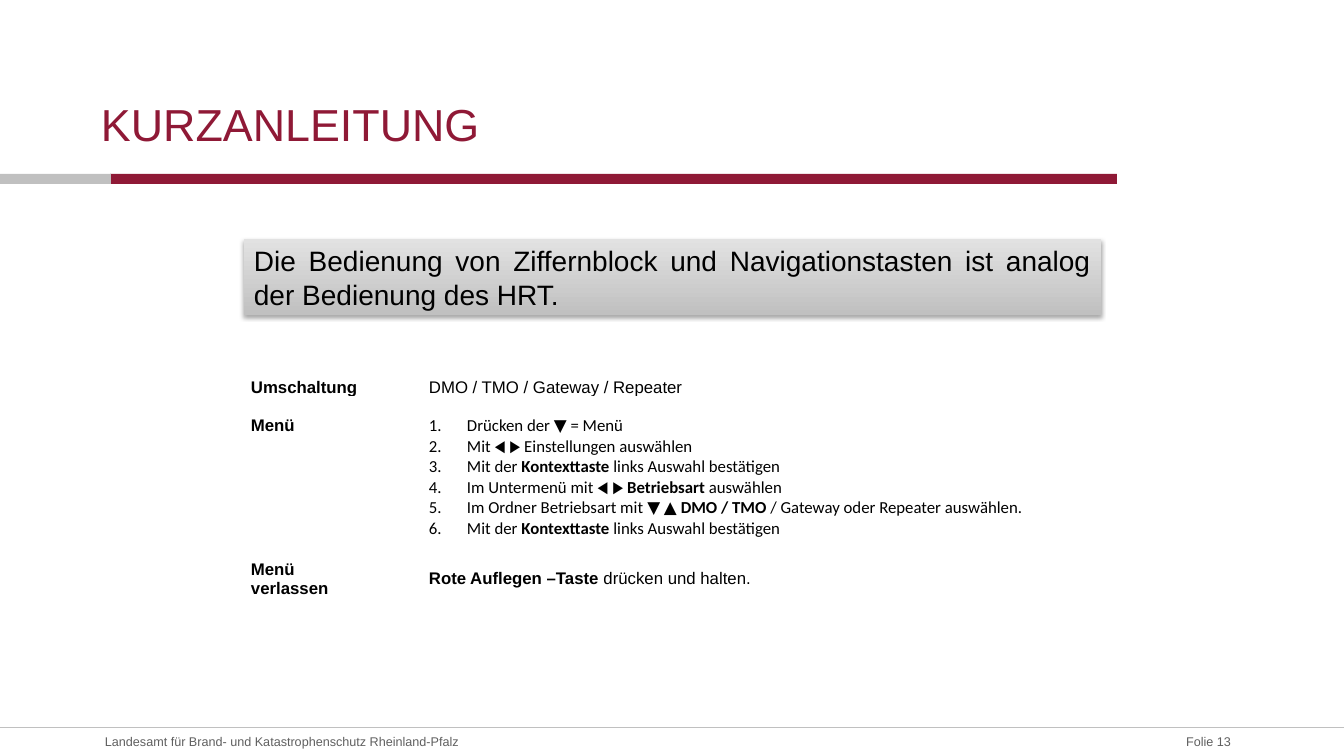
from lxml import etree
from pptx import Presentation, util as u
from pptx.dml.color import RGBColor
from pptx.enum import shapes, text
from pptx.oxml import parse_xml
from pptx.oxml.ns import nsdecls, qn

# Content: *...* marks bold
TITLE = "KURZANLEITUNG"
NOTE = ("Die Bedienung von Ziffernblock und Navigationstasten ist analog "
        "der Bedienung des HRT.")
STEPS = ["Drücken der ▼ = Menü",
         "Mit ◀ ▶ Einstellungen auswählen",
         "Mit der *Kontexttaste* links Auswahl bestätigen",
         "Im Untermenü mit ◀ ▶ *Betriebsart* auswählen",
         "Im Ordner Betriebsart mit ▼ ▲ *DMO / TMO* / Gateway oder Repeater auswählen.",
         "Mit der *Kontexttaste* links Auswahl bestätigen"]
ROWS = [(19, "*Umschaltung*", ["DMO / TMO / Gateway / Repeater"]),
        (18, "", [""]),
        (124, "*Menü*", STEPS),
        (20, "", [""]),
        (38, "*Menü\nverlassen*", ["*Rote Auflegen –Taste* drücken und halten."])]
COLS = [178, 610]
FOOT = [("Landesamt für Brand- und Katastrophenschutz Rheinland-Pfalz",
         (105, 728, 741, 28), "LEFT", 0),
        ("Folie 13", (1067, 728, 171, 28), "RIGHT", 7)]
RED, GREY, DARK, BLACK = "8F1936", "C0C0C0", "606060", "000000"
BARS = [((110, 174, 1007, 10), RED), ((0, 174, 111, 10), GREY)]


def px(n):
    return u.Emu(round(n * 914400 / 100.8))


def rgb(code):
    return RGBColor.from_string(code)


def box(at):
    return [px(n) for n in at]


def write(par, line, size, color=BLACK, face="Arial", side="LEFT"):
    par.alignment = getattr(text.PP_ALIGN, side)
    for i, part in enumerate(line.split("*")):
        for j, bit in enumerate(part.split("\n")):
            if j:
                par.add_line_break()
            if not bit:
                continue
            run = par.add_run()
            run.text = bit
            form = {"size": u.Pt(size), "name": face, "bold": i % 2 == 1}
            for key, val in form.items():
                setattr(run.font, key, val)
            run.font.color.rgb = rgb(color)


def frame(tf, anchor, right=0):
    form = {"margin_left": 0, "margin_top": 0, "margin_right": px(right),
            "margin_bottom": 0, "word_wrap": True,
            "auto_size": text.MSO_AUTO_SIZE.NONE,
            "vertical_anchor": getattr(text.MSO_ANCHOR, anchor)}
    for key, val in form.items():
        setattr(tf, key, val)


def rect(at):
    shape = slide.shapes.add_shape(shapes.MSO_SHAPE.RECTANGLE, *box(at))
    shape.shadow.inherit = False
    shape.line.fill.background()
    return shape


def number(par):
    props = par._p.get_or_add_pPr()
    props.set("marL", str(px(38)))
    props.set("indent", str(px(-38)))
    etree.SubElement(props, qn("a:buFont"), typeface="+mj-lt")
    etree.SubElement(props, qn("a:buAutoNum"), type="arabicPeriod")


prs = Presentation()
prs.slide_width, prs.slide_height = px(1344), px(756)
slide = prs.slides.add_slide(prs.slide_layouts[5])

# Title and bars
title = slide.shapes.title
title.left, title.top, title.width, title.height = box((101, 48, 858, 102))
frame(title.text_frame, "BOTTOM")
write(title.text_frame.paragraphs[0], TITLE, 32, RED)
for at, color in BARS:
    bar = rect(at)
    bar.fill.solid()
    bar.fill.fore_color.rgb = rgb(color)

# Footer
rule = slide.shapes.add_connector(shapes.MSO_CONNECTOR.STRAIGHT,
                                  *box((0, 728, 1344, 728)))
rule.line.color.rgb = rgb(GREY)
rule.line.width = u.Pt(0.75)
etree.SubElement(rule._element.spPr, qn("a:effectLst"))
for line, at, side, right in FOOT:
    tf = slide.shapes.add_textbox(*box(at)).text_frame
    frame(tf, "MIDDLE", right)
    write(tf.paragraphs[0], line, 9, DARK, side=side)

# Table
grid = slide.shapes.add_table(len(ROWS), len(COLS), *box(
    (244, 378, sum(COLS), sum(row[0] for row in ROWS)))).table
grid.first_row = grid.horz_banding = False
for col, wide in zip(grid.columns, COLS):
    col.width = px(wide)
for r, (high, label, lines) in enumerate(ROWS):
    grid.rows[r].height = px(high)
    for c, part in enumerate(([label], lines)):
        cell = grid.cell(r, c)
        cell.fill.background()
        cell.margin_left = cell.margin_right = px(7)
        cell.margin_top = cell.margin_bottom = 0
        if r == len(ROWS) - 1 and c == 1:
            cell.vertical_anchor = text.MSO_ANCHOR.MIDDLE
        steps = len(part) > 1
        for i, line in enumerate(part):
            tf = cell.text_frame
            par = tf.add_paragraph() if i else tf.paragraphs[0]
            if steps:
                number(par)
            write(par, line, 12, face="Calibri" if steps else "Arial",
                  side="LEFT" if r == len(ROWS) - 1 else "JUSTIFY")
            if not line:
                etree.SubElement(par._p, qn("a:endParaRPr"), sz="1100")

# Note with gradient and soft shadow
note = rect((244, 239, 857, 76))
note.fill.gradient()
note.fill.gradient_angle = 90
for stop, place, color in zip(note.fill.gradient_stops, (0, 1), (GREY, "E2E2E2")):
    stop.position = place
    stop.color.rgb = rgb(color)
note._element.spPr.find(qn("a:effectLst")).append(parse_xml(
    f'<a:outerShdw {nsdecls("a")} blurRad="{u.Pt(3.1)}" dist="{u.Pt(1.8)}" '
    f'dir="5400000" rotWithShape="0"><a:srgbClr val="{BLACK}">'
    '<a:alpha val="35000"/></a:srgbClr></a:outerShdw>'))
note.text_frame.word_wrap = True
note.text_frame.vertical_anchor = text.MSO_ANCHOR.MIDDLE
write(note.text_frame.paragraphs[0], NOTE, 20, side="JUSTIFY")

prs.save("out.pptx")
